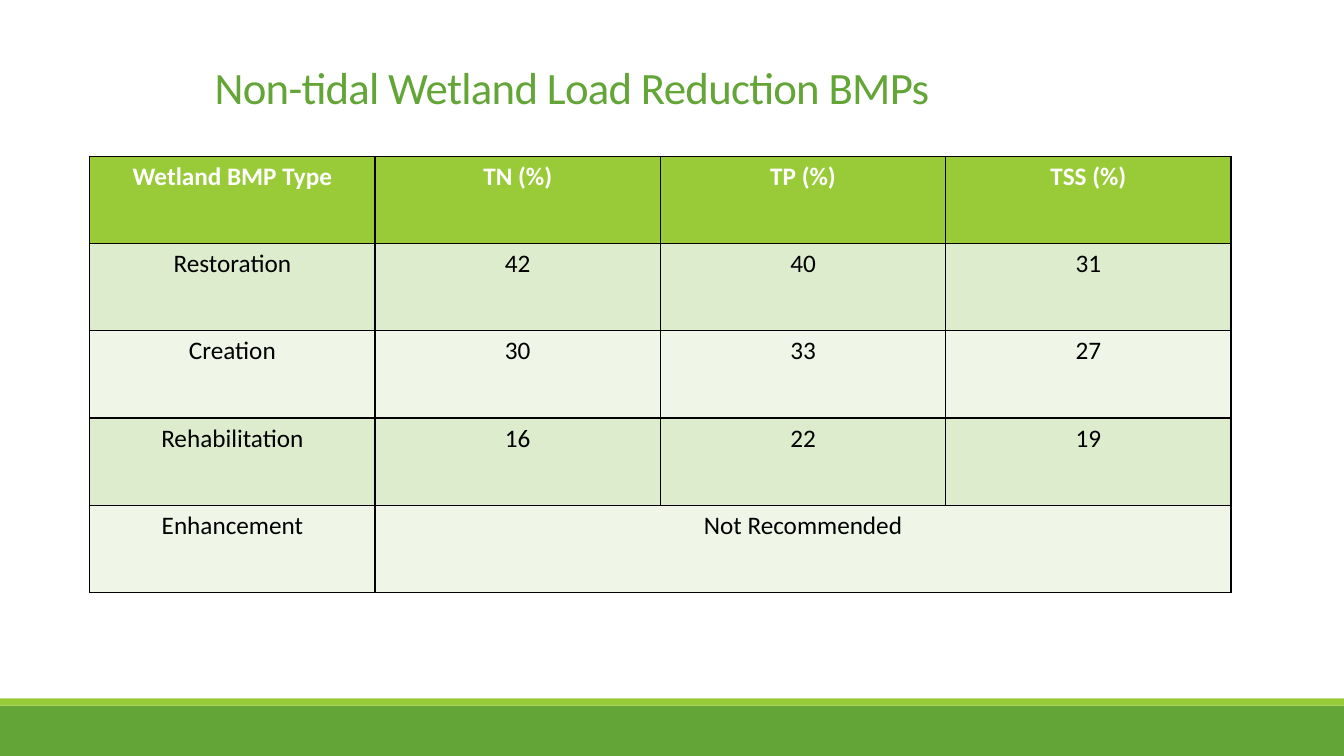
"""Build a slide with a table of wetland load reduction BMPs."""
from typing import Any, NamedTuple

from lxml import etree
from pptx import Presentation
from pptx.dml import color
from pptx.enum import shapes, text
from pptx.oxml import ns
from pptx.util import Inches, Pt

COLORS = {
    "green": "63A537",
    "lime": "99CB38",
    "dark_band": "DEECCE",
    "light_band": "EFF6E8",
    "white": "FFFFFF",
    "black": "000000",
}


class Band(NamedTuple):
    top: float
    height: float
    fill: str


class BmpRow(NamedTuple):
    labels: tuple[str, ...]
    fill: str
    ink: str = "black"
    bold: bool = False


FOOTER_BANDS = [Band(7, 0.5, "green"), Band(6.93, 0.07, "lime")]
BMP_ROWS = [
    BmpRow(("Wetland BMP Type", "TN (%)", "TP (%)", "TSS (%)"), "lime", "white", True),
    BmpRow(("Restoration", "42", "40", "31"), "dark_band"),
    BmpRow(("Creation", "30", "33", "27"), "light_band"),
    BmpRow(("Rehabilitation", "16", "22", "19"), "dark_band"),
    BmpRow(("Enhancement", "Not Recommended"), "light_band"),
]
COLUMN_COUNT = 4
COLUMN_WIDTH, ROW_HEIGHT = 2.83, 0.866


def rgb(name: str) -> color.RGBColor:
    return color.RGBColor.from_string(COLORS[name])


def apply_format(target: Any, values: dict[str, Any]) -> None:
    for attribute, value in values.items():
        setattr(target, attribute, value)


def write(paragraph: Any, words: str, size: float, ink: str, bold: bool = False) -> Any:
    run = paragraph.add_run()
    run.text = words
    apply_format(run.font, {"name": "Calibri", "size": Pt(size), "bold": bold})
    run.font.color.rgb = rgb(ink)
    return run


def draw_band(slide: Any, band: Band) -> None:
    strip = slide.shapes.add_shape(
        shapes.MSO_SHAPE.RECTANGLE, 0, Inches(band.top), Inches(13.33), Inches(band.height)
    )
    strip.shadow.inherit = False
    strip.fill.solid()
    strip.fill.fore_color.rgb = rgb(band.fill)
    strip.line.fill.background()


def draw_title(slide: Any, words: str) -> None:
    title = slide.shapes.add_textbox(Inches(2.03), Inches(-0.41), Inches(11), Inches(1.59))
    apply_format(
        title.text_frame, {"word_wrap": True, "vertical_anchor": text.MSO_ANCHOR.BOTTOM}
    )
    paragraph = title.text_frame.paragraphs[0]
    paragraph.line_spacing = 0.85
    run = write(paragraph, words, 32, "green")
    run.font._element.set("spc", "-50")


def outline_cell(cell: Any) -> None:
    properties = cell._tc.get_or_add_tcPr()
    for side in ("a:lnL", "a:lnR", "a:lnT", "a:lnB"):
        border = etree.SubElement(properties, ns.qn(side), w=str(Pt(1)))
        fill = etree.SubElement(border, ns.qn("a:solidFill"))
        etree.SubElement(fill, ns.qn("a:srgbClr"), val=COLORS["black"])


def draw_table(slide: Any, rows: list[BmpRow]) -> None:
    table = slide.shapes.add_table(
        len(rows), COLUMN_COUNT, Inches(0.89), Inches(1.55),
        Inches(COLUMN_WIDTH * COLUMN_COUNT), Inches(ROW_HEIGHT * len(rows)),
    ).table
    for row_index, row in enumerate(rows):
        for column_index in range(COLUMN_COUNT):
            cell = table.cell(row_index, column_index)
            outline_cell(cell)
            cell.fill.solid()
            cell.fill.fore_color.rgb = rgb(row.fill)
        for column_index, label in enumerate(row.labels):
            paragraph = table.cell(row_index, column_index).text_frame.paragraphs[0]
            paragraph.alignment = text.PP_ALIGN.CENTER
            write(paragraph, label, 18, row.ink, row.bold)
        last_label = len(row.labels) - 1
        if last_label < COLUMN_COUNT - 1:
            table.cell(row_index, last_label).merge(table.cell(row_index, COLUMN_COUNT - 1))


def main() -> None:
    deck = Presentation()
    apply_format(deck, {"slide_width": Inches(13.33), "slide_height": Inches(7.5)})
    slide = deck.slides.add_slide(deck.slide_layouts[6])
    for band in FOOTER_BANDS:
        draw_band(slide, band)
    draw_title(slide, "Non-tidal Wetland Load Reduction BMPs")
    draw_table(slide, BMP_ROWS)
    deck.save("out.pptx")


if __name__ == "__main__":
    main()
